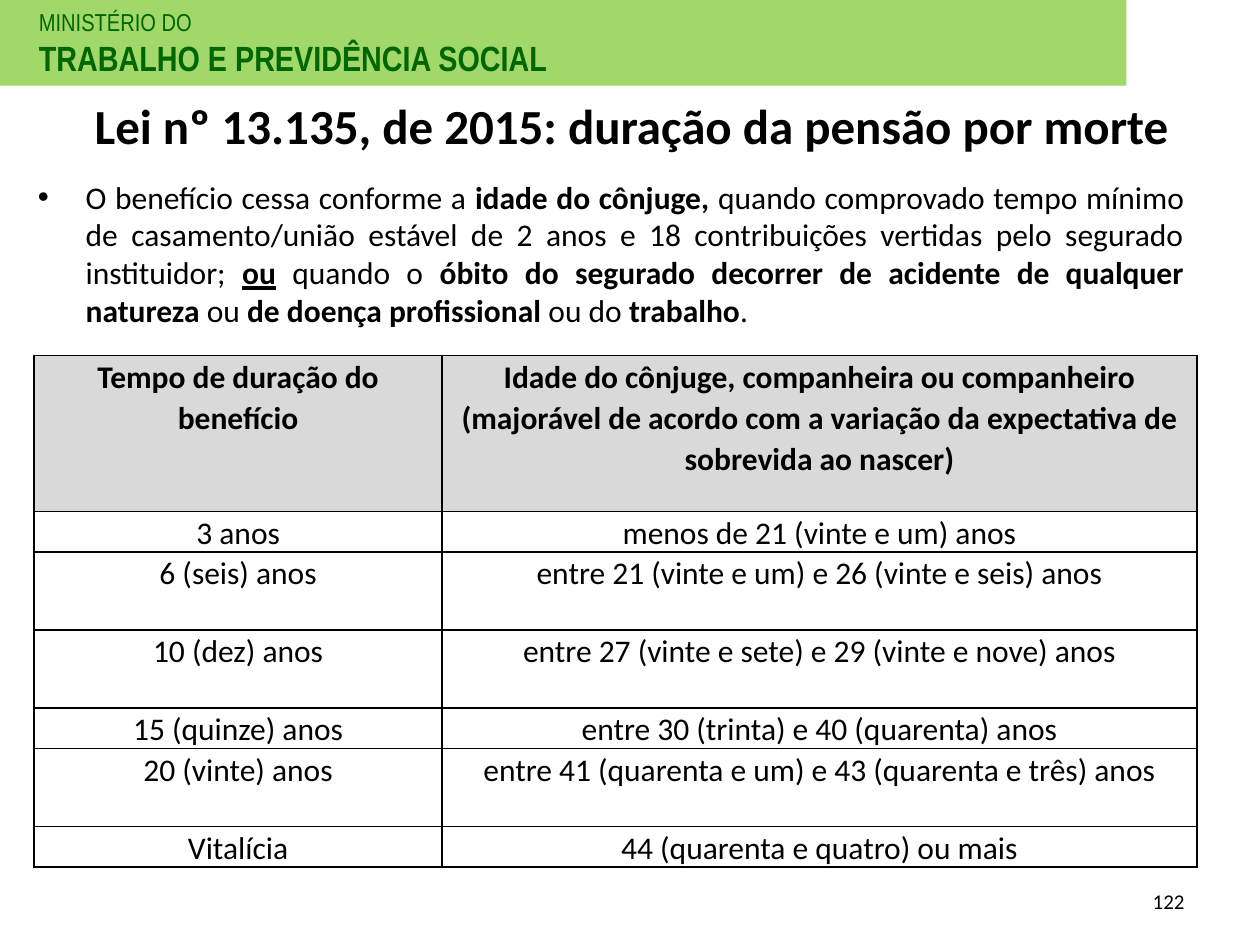
import dataclasses

import lxml.etree
import pptx
import pptx.dml.color
import pptx.enum.shapes
import pptx.enum.text
import pptx.oxml.ns
import pptx.util

Inches = pptx.util.Inches
Align = pptx.enum.text.PP_ALIGN
Anchor = pptx.enum.text.MSO_ANCHOR


@dataclasses.dataclass(frozen=True)
class Theme:
    """Colours, fonts and type sizes of the slide."""

    ink: str = "000000"
    band: str = "92D050"
    ministry: str = "006600"
    header_fill: str = "D9D9D9"
    face: str = "Calibri"
    narrow_face: str = "Arial Narrow"
    title_size: int = 28
    text_size: int = 18
    number_size: int = 12
    ministry_sizes: tuple = (14, 20)


def apply(target, formats):
    """Set each attribute of the target from a dict of values."""
    for name, value in formats.items():
        setattr(target, name, value)


def add_element(parent, tag, **attributes):
    """Append a DrawingML element to the parent."""
    return lxml.etree.SubElement(parent, pptx.oxml.ns.qn(tag), attributes)


class PageBuilder:
    """Holds the theme and the current page."""

    def __init__(self, deck, theme):
        """Start a page with a title and a body."""
        self.theme = theme
        self.page = deck.slides.add_slide(deck.slide_layouts[1])

    def add_span(self, para, text, size, color=None, face=None, **formats):
        """Add one formatted span to a paragraph."""
        span = para.add_run()
        span.text = text
        apply(span.font, {"size": pptx.util.Pt(size), "name": face or self.theme.face, **formats})
        span.font.color.rgb = pptx.dml.color.RGBColor.from_string(color or self.theme.ink)

    def place(self, box, left, top, width, height):
        """Move and size a box."""
        apply(box, {"left": Inches(left), "top": Inches(top),
                    "width": Inches(width), "height": Inches(height)})

    def band(self, left, top, width, height, opacity):
        """Draw a translucent band."""
        shape = self.page.shapes.add_shape(
            pptx.enum.shapes.MSO_SHAPE.RECTANGLE,
            *map(Inches, (left, top, width, height)))
        shape.shadow.inherit = False
        shape.fill.solid()
        shape.fill.fore_color.rgb = pptx.dml.color.RGBColor.from_string(self.theme.band)
        shape.line.fill.background()
        color = shape._element.spPr.find(".//" + pptx.oxml.ns.qn("a:srgbClr"))
        add_element(color, "a:alpha", val=str(opacity * 1000))

    def text_box(self, place, lines, align=Align.LEFT, anchor=Anchor.TOP):
        """Add a text box with one paragraph for each line."""
        frame = self.page.shapes.add_textbox(*map(Inches, place)).text_frame
        apply(frame, {"word_wrap": True, "vertical_anchor": anchor})
        for index, (text, formats) in enumerate(lines):
            para = frame.add_paragraph() if index else frame.paragraphs[0]
            para.alignment = align
            self.add_span(para, text, **formats)

    def title(self, place, text):
        """Fill the title placeholder."""
        box = self.page.shapes.title
        self.place(box, *place)
        apply(box.text_frame, {"word_wrap": True, "vertical_anchor": Anchor.MIDDLE})
        para = box.text_frame.paragraphs[0]
        para.alignment = Align.CENTER
        self.add_span(para, text, self.theme.title_size, bold=True)

    def bullet(self, place, spans, indent):
        """Fill the body placeholder with one justified bullet."""
        box = self.page.placeholders[1]
        self.place(box, *place)
        para = box.text_frame.paragraphs[0]
        apply(para, {"alignment": Align.JUSTIFY, "space_before": pptx.util.Pt(0)})
        properties = para._p.get_or_add_pPr()
        properties.set("marL", str(Inches(indent)))
        properties.set("indent", str(-Inches(indent)))
        add_element(properties, "a:buFont", typeface="Arial")
        add_element(properties, "a:buChar", char="•")
        for text, formats in spans:
            self.add_span(para, text, self.theme.text_size, **{"bold": False, **formats})

    def cell(self, cell, text, header):
        """Format and fill one table cell."""
        apply(cell, {"margin_left": Inches(0.07), "margin_right": Inches(0.07),
                     "margin_top": 0, "margin_bottom": 0})
        para = cell.text_frame.paragraphs[0]
        apply(para, {"alignment": Align.CENTER, "line_spacing": 1.07,
                     "space_after": pptx.util.Pt(8)})
        self.add_span(para, text, self.theme.text_size, bold=header)
        properties = cell._tc.get_or_add_tcPr()
        for side in "LRTB":
            line = add_element(properties, "a:ln" + side, w=str(pptx.util.Pt(1)))
            add_element(add_element(line, "a:solidFill"), "a:srgbClr", val=self.theme.ink)
        if header:
            cell.fill.solid()
            cell.fill.fore_color.rgb = pptx.dml.color.RGBColor.from_string(self.theme.header_fill)
        else:
            cell.fill.background()

    def table(self, left, top, widths, heights, rows):
        """Add a bordered table whose first row is the header."""
        place = map(Inches, (left, top, sum(widths), sum(heights)))
        table = self.page.shapes.add_table(len(rows), len(widths), *place).table
        table.horz_banding = False
        for column, width in zip(table.columns, widths):
            column.width = Inches(width)
        for index, (height, texts) in enumerate(zip(heights, rows)):
            table.rows[index].height = Inches(height)
            for column, text in enumerate(texts):
                self.cell(table.cell(index, column), text, index == 0)


BOLD = {"bold": True}
RULE = [
    ("O benefício cessa conforme a ", {}),
    ("idade do cônjuge, ", BOLD),
    ("quando comprovado tempo mínimo de casamento/união estável de 2 anos e "
     "18 contribuições vertidas pelo segurado instituidor; ", {}),
    ("ou", {"bold": True, "underline": True}),
    (" quando o ", {}),
    ("óbito do segurado decorrer de acidente de qualquer natureza", BOLD),
    (" ou ", {}),
    ("de doença profissional ", BOLD),
    ("ou do ", {}),
    ("trabalho", BOLD),
    (".", {}),
]
DURATIONS = [
    ("Tempo de duração do benefício",
     "Idade do cônjuge, companheira ou companheiro (majorável de acordo com "
     "a variação da expectativa de sobrevida ao nascer)"),
    ("3 anos", "menos de 21 (vinte e um) anos"),
    ("6 (seis) anos", "entre 21 (vinte e um) e 26 (vinte e seis) anos"),
    ("10 (dez) anos", "entre 27 (vinte e sete) e 29 (vinte e nove) anos"),
    ("15 (quinze) anos", "entre 30 (trinta) e 40 (quarenta) anos"),
    ("20 (vinte) anos", "entre 41 (quarenta e um) e 43 (quarenta e três) anos"),
    ("Vitalícia", "44 (quarenta e quatro) ou mais"),
]


def main():
    """Build the slide and save it."""
    deck = pptx.Presentation()
    apply(deck, {"slide_width": Inches(10), "slide_height": Inches(7.5)})
    theme = Theme()
    builder = PageBuilder(deck, theme)
    builder.band(0, 0, 8.94, 0.68, opacity=85)
    ministry = {"color": theme.ministry, "face": theme.narrow_face}
    small, large = theme.ministry_sizes
    builder.text_box((0.21, 0.01, 5.75, 0.67), [
        ("MINISTÉRIO DO", {"size": small, **ministry}),
        ("TRABALHO E PREVIDÊNCIA SOCIAL", {"size": large, "bold": True, **ministry}),
    ])
    builder.title((0.52, 0.62, 8.98, 0.74),
                  "Lei nº 13.135, de 2015: duração da pensão por morte")
    builder.bullet((0.2, 1.36, 9.3, 1.68), RULE, indent=0.38)
    single, double = 0.31, 0.62
    builder.table(0.27, 2.82, (3.24, 5.99),
                  (1.24, single, double, double, single, double, single), DURATIONS)
    builder.text_box((7.17, 6.95, 2.33, 0.4), [("122", {"size": theme.number_size})],
                     Align.RIGHT, Anchor.MIDDLE)
    deck.save("out.pptx")


if __name__ == "__main__":
    main()
